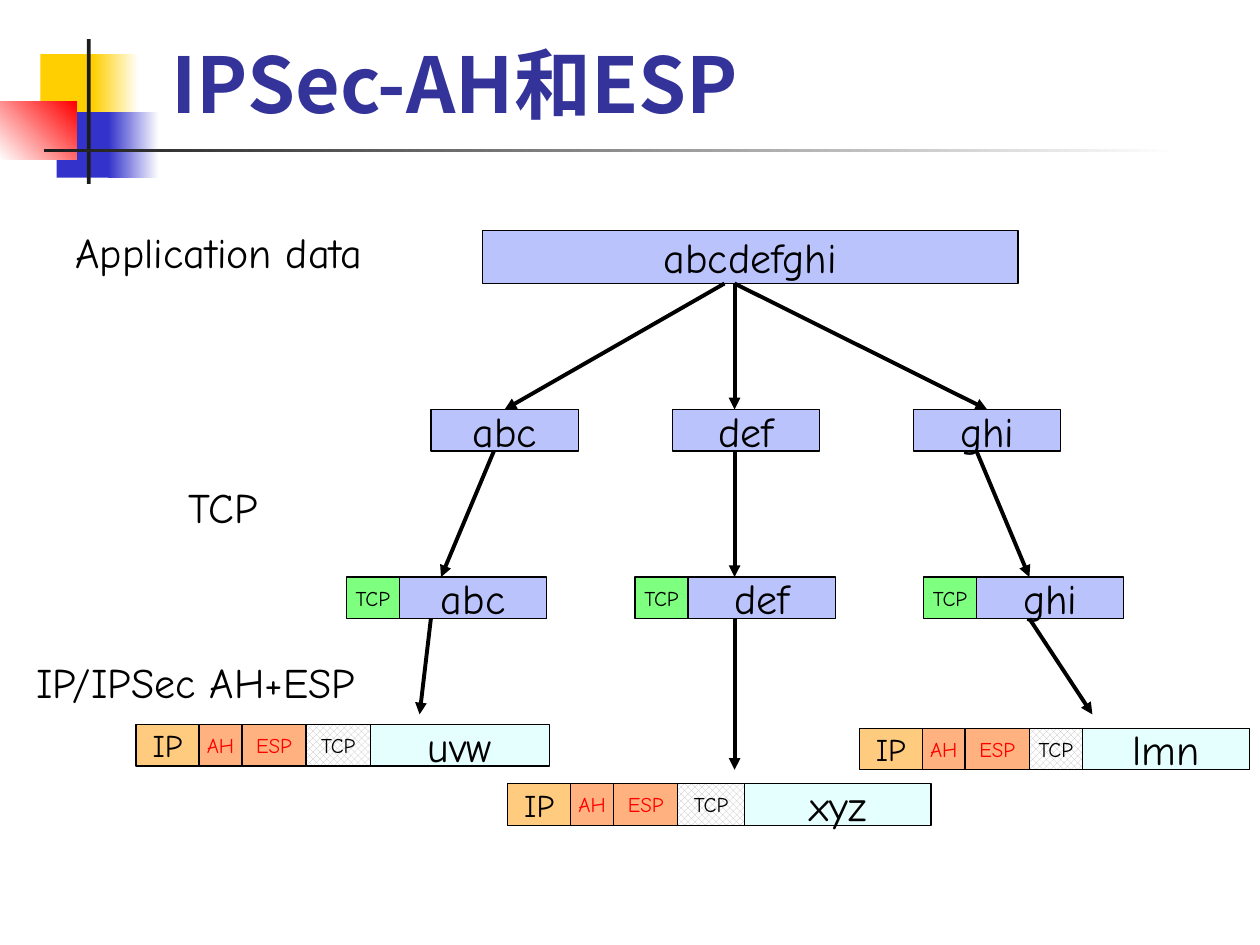
from lxml.etree import SubElement
from pptx import Presentation
from pptx.dml.color import RGBColor
from pptx.enum.shapes import MSO_CONNECTOR, MSO_SHAPE
from pptx.enum.text import MSO_ANCHOR, MSO_AUTO_SIZE, PP_ALIGN
from pptx.oxml.ns import qn
from pptx.util import Inches, Pt

FONT = "Comic Neue"
BLACK, RED, WHITE = "000000", "FF0000", "FFFFFF"
DATA, TCP, CIPHER = "7889FB", "00FF00", "CCFFFF"
IP, IPSEC, HATCH = "FF9900", "FF6600", "hatch"
BOX_H, DATA_W = 0.33, 1.17
SPLIT_TOP, TCP_TOP = 3.25, 4.58


def rgb(value):
    return RGBColor.from_string(value)


def style(run, size, color=BLACK, name=FONT, bold=False):
    font = run.font
    font.size, font.name, font.bold = Pt(size), name, bold
    font.color.rgb = rgb(color)
    props = run._r.get_or_add_rPr()
    SubElement(props, qn("a:ea"), typeface=name)


def add_rect(shapes, left, top, width, height):
    sp = shapes.add_shape(MSO_SHAPE.RECTANGLE, Inches(left), Inches(top),
                          Inches(width), Inches(height))
    sp.shadow.inherit = False
    return sp


def add_decoration(s, left, top, width, height, color, end=None, angle=0):
    """Borderless block, fading from color to end when end is given."""
    sp = add_rect(s.shapes, left, top, width, height)
    sp.line.fill.background()
    if end is None:
        sp.fill.solid()
        sp.fill.fore_color.rgb = rgb(color)
        return
    sp.fill.gradient()
    sp.fill.gradient_angle = angle
    for stop, value in zip(sp.fill.gradient_stops, (color, end)):
        stop.color.rgb = rgb(value)


def add_box(shapes, left, top, width, text, fill=DATA, size=24, color=BLACK,
            height=BOX_H):
    """Outlined box with a half-transparent or hatched fill."""
    sp = add_rect(shapes, left, top, width, height)
    if fill == HATCH:
        sp.fill.patterned()
        sp.fill.fore_color.rgb = rgb("C0C0C0")
        sp.fill.back_color.rgb = rgb(WHITE)
        sp._element.spPr.find(qn("a:pattFill")).set("prst", "openDmnd")
    else:
        sp.fill.solid()
        sp.fill.fore_color.rgb = rgb(fill)
        clr = sp._element.spPr.find(qn("a:solidFill")).find(qn("a:srgbClr"))
        SubElement(clr, qn("a:alpha"), val="50000")
    sp.line.color.rgb = rgb(BLACK)
    sp.line.width = Pt(0.75)
    tf = sp.text_frame
    tf.text = text
    tf.word_wrap = False
    tf.vertical_anchor = MSO_ANCHOR.MIDDLE
    p = tf.paragraphs[0]
    p.alignment = PP_ALIGN.CENTER
    style(p.runs[0], size, color)
    return sp


def add_packet(s, left, top, segments):
    """Group of adjoining boxes; each segment is (width, text, fill, size, color)."""
    group = s.shapes.add_group_shape()
    for width, *content in segments:
        add_box(group.shapes, left, top, width, *content)
        left += width


def add_arrow(s, x1, y1, x2, y2, target=None):
    line = s.shapes.add_connector(MSO_CONNECTOR.STRAIGHT, Inches(x1), Inches(y1),
                                  Inches(x2), Inches(y2))
    if target is not None:
        line.end_connect(target, 0)
    line.line.color.rgb = rgb(BLACK)
    line.line.width = Pt(2.25)
    SubElement(line._element.spPr.find(qn("a:ln")), qn("a:tailEnd"), type="triangle")
    SubElement(line._element.spPr, qn("a:effectLst"))


def add_label(s, left, top, width, text, wrap=False):
    sp = s.shapes.add_textbox(Inches(left), Inches(top), Inches(width), Inches(0.5))
    tf = sp.text_frame
    tf.text = text
    tf.word_wrap = wrap
    tf.auto_size = MSO_AUTO_SIZE.SHAPE_TO_FIT_TEXT
    style(tf.paragraphs[0].runs[0], 24)


def set_title(s, text):
    title = s.shapes.title
    title.left, title.top = Inches(1.26), Inches(0.23)
    title.width, title.height = Inches(8.52), Inches(0.84)
    tf = title.text_frame
    tf.text = text
    tf.vertical_anchor = MSO_ANCHOR.BOTTOM
    p = tf.paragraphs[0]
    p.alignment = PP_ALIGN.LEFT
    style(p.runs[0], 44, "333399", "Noto Sans CJK SC", True)


def add_decorations(s):
    add_decoration(s, 0.32, 0.43, 0.48, 0.52, "FFCF01")
    add_decoration(s, 0.74, 0.43, 0.36, 0.52, "FFCF01", WHITE)
    add_decoration(s, 0.45, 0.89, 0.46, 0.52, "3333CC")
    add_decoration(s, 0.86, 0.89, 0.4, 0.52, "3333CC", WHITE)
    add_decoration(s, 0, 0.81, 0.61, 0.46, WHITE, RED, 45)
    add_decoration(s, 0.69, 0.31, 0.03, 1.15, "1C1C1C")
    add_decoration(s, 0.35, 1.18, 9, 0.03, "1C1C1C", WHITE)


def main():
    prs = Presentation()
    prs.slide_width, prs.slide_height = Inches(10), Inches(7.5)
    s = prs.slides.add_slide(prs.slide_layouts[5])
    add_decorations(s)
    set_title(s, "IPSec-AH和ESP")

    add_box(s.shapes, 3.83, 1.83, 4.25, "abcdefghi", height=0.42)
    parts = ("abc", "def", "ghi")
    abc, _, ghi = [add_box(s.shapes, 3.42 + 1.915 * i, SPLIT_TOP, DATA_W, part)
                   for i, part in enumerate(parts)]
    for i, part in enumerate(parts):
        add_packet(s, 2.75 + 2.29 * i, TCP_TOP,
                   [(0.42, "TCP", TCP, 12), (DATA_W, part)])

    for left, top, tcp_width, width, text in (
            (1.08, 5.75, 0.51, 1.42, "uvw"),
            (4.03, 6.22, 0.53, 1.48, "xyz"),
            (6.82, 5.78, 0.42, 1.33, "lmn")):
        add_packet(s, left, top, [(0.5, "IP", IP, 18),
                                  (0.34, "AH", IPSEC, 12, RED),
                                  (0.51, "ESP", IPSEC, 12, RED),
                                  (tcp_width, "TCP", HATCH, 12),
                                  (width, text, CIPHER)])

    for x1, x2, target in ((5.75, 4, abc), (5.83, 5.83, None), (5.83, 7.83, ghi)):
        add_arrow(s, x1, 2.25, x2, SPLIT_TOP, target)
    for x1, x2 in ((3.92, 3.5), (5.83, 5.83), (7.75, 8.17)):
        add_arrow(s, x1, SPLIT_TOP + BOX_H, x2, TCP_TOP)
    for x1, x2, y2 in ((3.42, 3.33, 5.67), (5.83, 5.83, 6.11), (8.17, 8.67, 5.67)):
        add_arrow(s, x1, TCP_TOP + BOX_H, x2, y2)

    add_label(s, 0.5, 1.75, 3, "Application data", wrap=True)
    add_label(s, 1.4, 3.77, 0.81, "TCP")
    add_label(s, 0.19, 5.16, 3.07, "IP/IPSec AH+ESP")
    prs.save("out.pptx")


if __name__ == "__main__":
    main()
